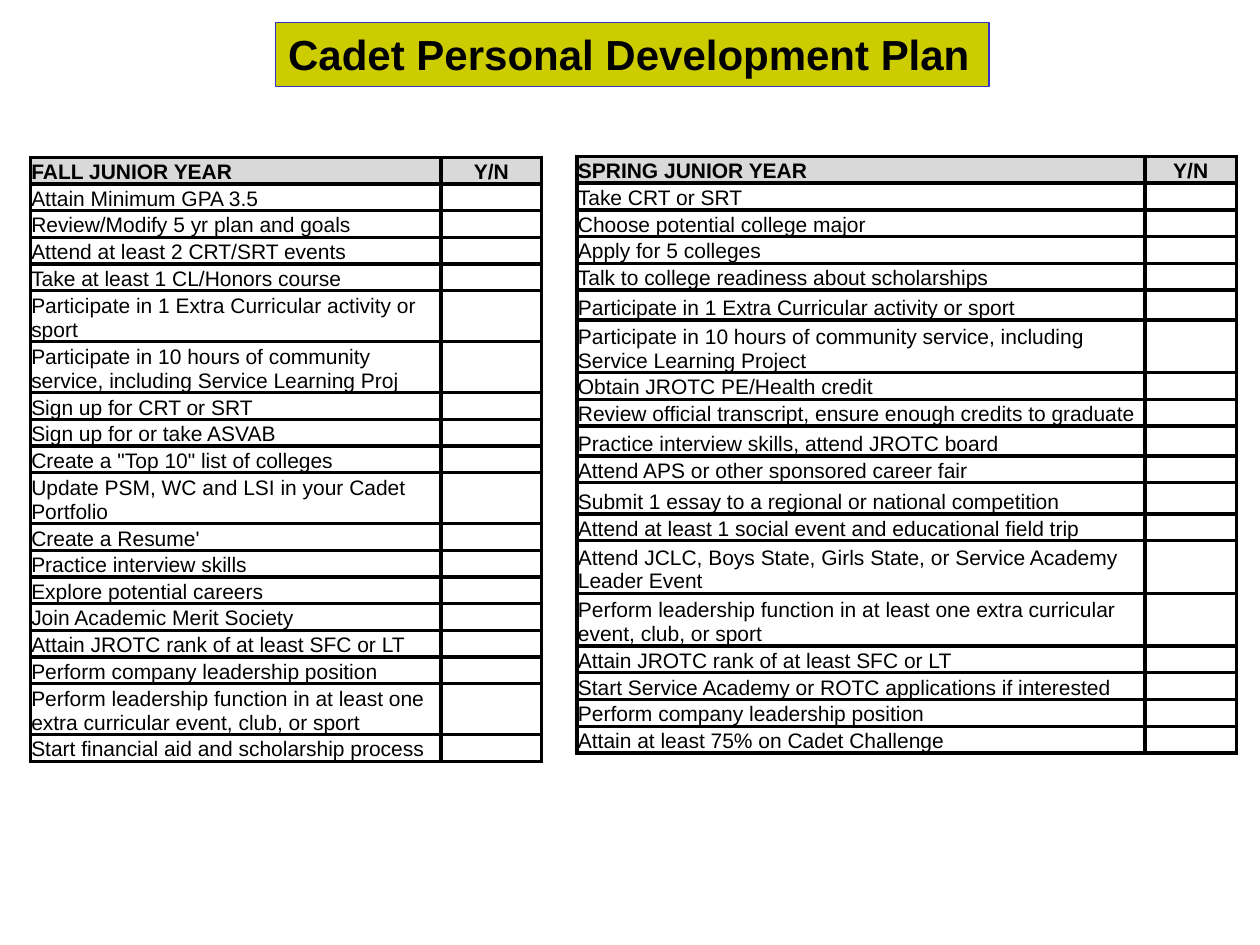
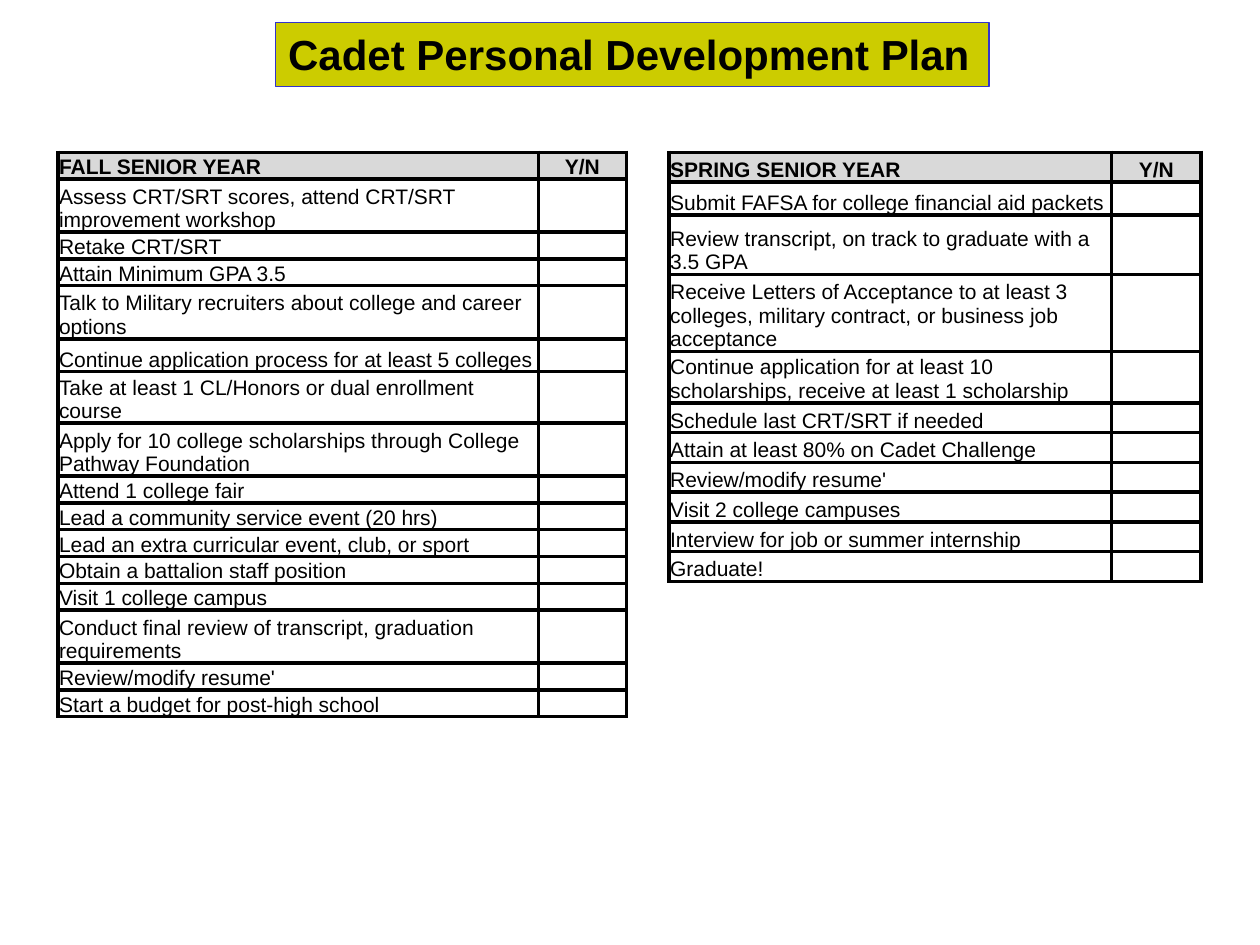
"""Build the junior and senior year checklists of the Cadet Personal Development Plan."""
from dataclasses import dataclass

from lxml import etree
from pptx import Presentation
from pptx.dml.color import RGBColor
from pptx.enum import shapes, text
from pptx.oxml import ns
from pptx.util import Cm, Pt

TITLE = "Cadet Personal Development Plan"
TITLE_BOX = (5.56, 0.46, 14.38, 1.28)
ANSWER = "Y/N"

FALL_JUNIOR = {
    "heading": "FALL JUNIOR YEAR",
    "at": (0.61, 3.18),
    "cols": (8.28, 2.03),
    "row": 0.53,
    "taller": dict.fromkeys((5, 6, 10, 17), 1.03),
    "goals": [
        "Attain Minimum GPA 3.5",
        "Review/Modify 5 yr plan and goals",
        "Attend at least 2 CRT/SRT events",
        "Take at least 1 CL/Honors course",
        "Participate in 1 Extra Curricular activity or sport",
        "Participate in 10 hours of community service, including Service Learning Proj",
        "Sign up for CRT or SRT",
        "Sign up for or take ASVAB",
        'Create a "Top 10" list of colleges',
        "Update PSM, WC and LSI in your Cadet Portfolio",
        "Create a Resume'",
        "Practice interview skills",
        "Explore potential careers",
        "Join Academic Merit Society",
        "Attain JROTC rank of at least SFC or LT",
        "Perform company leadership position",
        "Perform leadership function in at least one extra curricular event, club, or sport",
        "Start financial aid and scholarship process",
    ],
}

SPRING_JUNIOR = {
    "heading": "SPRING JUNIOR YEAR",
    "at": (11.63, 3.15),
    "cols": (11.45, 1.85),
    "row": 0.54,
    "taller": {5: 0.6, 6: 1.06, 9: 0.6, 11: 0.63, 13: 1.06, 14: 1.06},
    "goals": [
        "Take CRT or SRT",
        "Choose potential college major",
        "Apply for 5 colleges",
        "Talk to college readiness about scholarships",
        "Participate in 1 Extra Curricular activity or sport",
        "Participate in 10 hours of community service, including Service Learning Project",
        "Obtain JROTC PE/Health credit",
        "Review official transcript, ensure enough credits to graduate",
        "Practice interview skills, attend JROTC board",
        "Attend APS or other sponsored career fair",
        "Submit 1 essay to a regional or national competition",
        "Attend at least 1 social event and educational field trip",
        "Attend JCLC, Boys State, Girls State, or Service Academy Leader Event",
        "Perform leadership function in at least one extra curricular event, club, or sport",
        "Attain JROTC rank of at least SFC or LT",
        "Start Service Academy or ROTC applications if interested",
        "Perform company leadership position",
        "Attain at least 75% on Cadet Challenge",
    ],
}

FALL_SENIOR = {
    "heading": "FALL SENIOR YEAR",
    "at": (1.17, 3.07),
    "cols": (9.68, 1.78),
    "row": 0.54,
    "taller": {1: 1.07, 4: 1.07, 5: 0.66, 6: 1.03, 7: 1.07, 13: 1.07},
    "goals": [
        "Assess CRT/SRT scores, attend CRT/SRT improvement workshop",
        "Retake CRT/SRT",
        "Attain Minimum GPA 3.5",
        "Talk to Military recruiters about college and career options",
        "Continue application process for at least 5 colleges",
        "Take at least 1 CL/Honors or dual enrollment course",
        "Apply for 10 college scholarships through College Pathway Foundation",
        "Attend 1 college fair",
        "Lead a community service event (20 hrs)",
        "Lead an extra curricular event, club, or sport",
        "Obtain a battalion staff position",
        "Visit 1 college campus",
        "Conduct final review of transcript, graduation requirements",
        "Review/modify resume'",
        "Start a budget for post-high school",
    ],
}

SPRING_SENIOR = {
    "heading": "SPRING SENIOR YEAR",
    "at": (13.49, 3.07),
    "cols": (8.92, 1.8),
    "row": 0.6,
    "taller": {1: 0.66, 2: 1.2, 3: 1.55, 4: 1.04},
    "goals": [
        "Submit FAFSA for college financial aid packets",
        "Review transcript, on track to graduate with a 3.5 GPA",
        "Receive Letters of Acceptance to at least 3 colleges, military contract, "
        "or business job acceptance",
        "Continue application for at least 10 scholarships, receive at least 1 scholarship",
        "Schedule last CRT/SRT if needed",
        "Attain at least 80% on Cadet Challenge",
        "Review/modify resume'",
        "Visit 2 college campuses",
        "Interview for job or summer internship",
        "Graduate!",
    ],
}

SLIDES = [(FALL_JUNIOR, SPRING_JUNIOR), (FALL_SENIOR, SPRING_SENIOR)]


@dataclass(frozen=True)
class Theme:
    font: str = "Arial"
    ink: str = "000000"
    paper: str = "FFFFFF"
    heading: str = "D9D9D9"
    title_fill: str = "CCCC00"
    title_line: str = "3333CC"
    title_size: float = 24
    cell_size: float = 12
    border: float = 2.25
    title_border: float = 0.75


THEME = Theme()


def rgb(value):
    return RGBColor.from_string(value)


def add_run(p, words, size, bold):
    r = p.add_run()
    r.text = words
    r.font.name, r.font.size, r.font.bold = THEME.font, Pt(size), bold
    r.font.color.rgb = rgb(THEME.ink)


def add_title(s):
    sp = s.shapes.add_shape(shapes.MSO_SHAPE.RECTANGLE, *map(Cm, TITLE_BOX))
    sp.shadow.inherit = False
    sp.fill.solid()
    sp.fill.fore_color.rgb = rgb(THEME.title_fill)
    sp.line.color.rgb = rgb(THEME.title_line)
    sp.line.width = Pt(THEME.title_border)
    tf = sp.text_frame
    tf.word_wrap = False
    tf.auto_size = text.MSO_AUTO_SIZE.SHAPE_TO_FIT_TEXT
    tf.vertical_anchor = text.MSO_ANCHOR.TOP
    p = tf.paragraphs[0]
    p.alignment = text.PP_ALIGN.LEFT
    add_run(p, TITLE, THEME.title_size, True)


def add_borders(cell):
    tc_pr = cell._tc.get_or_add_tcPr()
    for side in ("lnL", "lnR", "lnT", "lnB"):
        ln = etree.SubElement(tc_pr, ns.qn(f"a:{side}"), w=str(Pt(THEME.border)))
        fill = etree.SubElement(ln, ns.qn("a:solidFill"))
        etree.SubElement(fill, ns.qn("a:srgbClr"), val=THEME.ink)


def fill_cell(cell, words, heading, centred):
    cell.margin_left = cell.margin_right = cell.margin_top = Cm(0.02)
    cell.margin_bottom = 0
    cell.vertical_anchor = text.MSO_ANCHOR.BOTTOM
    add_borders(cell)
    cell.fill.solid()
    cell.fill.fore_color.rgb = rgb(THEME.heading if heading else THEME.paper)
    p = cell.text_frame.paragraphs[0]
    if centred:
        p.alignment = text.PP_ALIGN.CENTER
    if words:
        add_run(p, words, THEME.cell_size, heading)
    else:
        etree.SubElement(p._p, ns.qn("a:endParaRPr"), sz=str(int(THEME.cell_size * 100)))


def add_checklist(s, plan):
    rows = [(plan["heading"], ANSWER)] + [(goal, "") for goal in plan["goals"]]
    heights = [plan["taller"].get(i, plan["row"]) for i in range(len(rows))]
    size = (sum(plan["cols"]), sum(heights))
    table = s.shapes.add_table(len(rows), 2, *map(Cm, plan["at"] + size)).table
    table.first_row = table.horz_banding = False
    for column, width in zip(table.columns, plan["cols"]):
        column.width = Cm(width)
    for i, (row, height, words) in enumerate(zip(table.rows, heights, rows)):
        row.height = Cm(height)
        for j, cell in enumerate(row.cells):
            fill_cell(cell, words[j], heading=i == 0, centred=j == 1)


def main():
    prs = Presentation()
    prs.slide_width, prs.slide_height = Cm(25.4), Cm(19.05)
    for plans in SLIDES:
        s = prs.slides.add_slide(prs.slide_layouts[6])
        for plan in plans:
            add_checklist(s, plan)
        add_title(s)
    prs.save("out.pptx")


if __name__ == "__main__":
    main()
